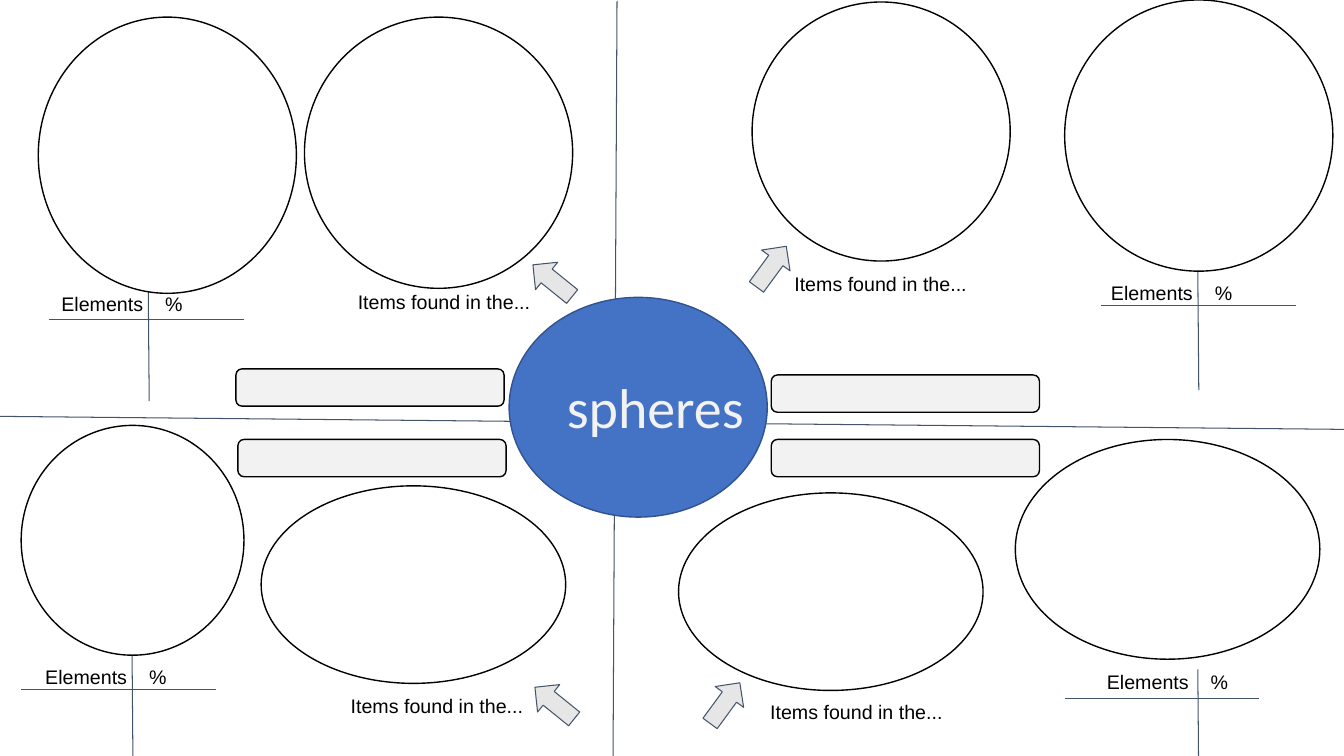
import pptx
import pptx.dml.color
import pptx.enum.shapes
import pptx.enum.text
import pptx.oxml.xmlchemy
import pptx.util

Inches = pptx.util.Inches
Pt = pptx.util.Pt
Kind = pptx.enum.shapes.MSO_SHAPE
Element = pptx.oxml.xmlchemy.OxmlElement

deck = pptx.Presentation()
deck.slide_width = Inches(13.33)
deck.slide_height = Inches(7.5)
slide = deck.slides.add_slide(deck.slide_layouts[6])
shapes = slide.shapes


def paint(part, color):
    """Give a fill, line or font format a solid hex colour."""
    if hasattr(part, "solid"):
        part.solid()
        part = part.fore_color
    else:
        part = part.color
    part.rgb = pptx.dml.color.RGBColor.from_string(color)


def label(text, box, size, font, color):
    """Add a text box and return its text frame."""
    frame = shapes.add_textbox(*map(Inches, box)).text_frame
    frame.word_wrap = True
    frame.margin_top = frame.margin_bottom = Inches(0.1)
    para = frame.paragraphs[0]
    para.text = text
    for run in para.runs:
        run.font.size = Pt(size)
        run.font.name = font
        paint(run.font, color)
    return frame


# Quadrant axes, then the two rules of each element table
tables = [  # text left, top; column x, top; row left, y
    (0.51, 2.8, 1.47, 2.8, 0.49, 3.17),
    (10.92, 2.69, 11.88, 2.69, 10.92, 3.03),
    (0.35, 6.5, 1.31, 6.5, 0.21, 6.84),
    (10.88, 6.55, 11.88, 6.64, 10.56, 6.93),
]
rules = [(-0.06, 4.13, 13.36, 4.26), (6.12, 0.01, 6.08, 7.56)]
for left, top, col, head, start, row in tables:
    rules.append((col, head, col + 0.01, head + 1.18))
    rules.append((start, row, start + 1.93, row))

for ends in rules:
    line = shapes.add_connector(
        pptx.enum.shapes.MSO_CONNECTOR.STRAIGHT, *map(Inches, ends))
    paint(line.line, "44546A")
    line.line.width = Pt(0.75)
    line._element.spPr.append(Element("a:effectLst"))

# Kind, box, rotation, fill, line colour, line width
items = [(Kind.OVAL, (5.05, 2.95, 2.56, 2.18), 0, "4472C4", "31538F", 1)]
for box in [
    (0.38, 0.17, 2.56, 2.74), (3.02, 0.17, 2.66, 2.69),
    (7.46, 0.02, 2.56, 2.57), (10.56, 0, 2.66, 2.69),
    (0.21, 4.22, 2.21, 2.28), (2.59, 4.82, 3.02, 1.96),
    (6.73, 4.89, 3.02, 1.96), (10.07, 4.36, 3.02, 2.18),
]:
    items.append((Kind.OVAL, box, 0, "FFFFFF", "000000", 1))
for left, top in [(2.34, 3.66), (7.65, 3.72), (2.36, 4.36), (7.65, 4.36)]:
    items.append((Kind.ROUNDED_RECTANGLE, (left, top, 2.66, 0.37), 0,
                  "F2F2F2", "000000", 1))
for left, top, turn in [(5.23, 2.61, 38.9), (7.4, 2.47, 126.2),
                        (5.25, 6.8, 38.9), (6.94, 6.8, 126.2)]:
    items.append((Kind.LEFT_ARROW, (left, top, 0.5, 0.35), turn,
                  "E7E6E6", "44546A", 0.75))

for kind, box, turn, fill, edge, width in items:
    shape = shapes.add_shape(kind, *map(Inches, box))
    shape.shadow.inherit = False
    shape.rotation = turn
    paint(shape.fill, fill)
    paint(shape.line, edge)
    shape.line.width = Pt(width)

# Labels
for left, top, *rest in tables:
    frame = label("Elements\t%", (left, top, 1.92, 0.86), 14, "Arial", "000000")
    stops = Element("a:tabLst")
    stop = Element("a:tab")
    stop.set("pos", str(Inches(1.03)))
    stop.set("algn", "l")
    stops.append(stop)
    frame.paragraphs[0]._p.get_or_add_pPr().append(stops)

for left, top in [(3.45, 2.78), (7.78, 2.6), (3.38, 6.78), (7.54, 6.84)]:
    label("Items found in the...", (left, top, 1.92, 0.77), 14, "Arial", "000000")

title = label("spheres", (5.35, 3.65, 2.3, 0.77), 40, "Calibri", "F2F2F2")
title.margin_top = title.margin_bottom = Inches(0.05)
title.paragraphs[0].alignment = pptx.enum.text.PP_ALIGN.CENTER

deck.save("out.pptx")
